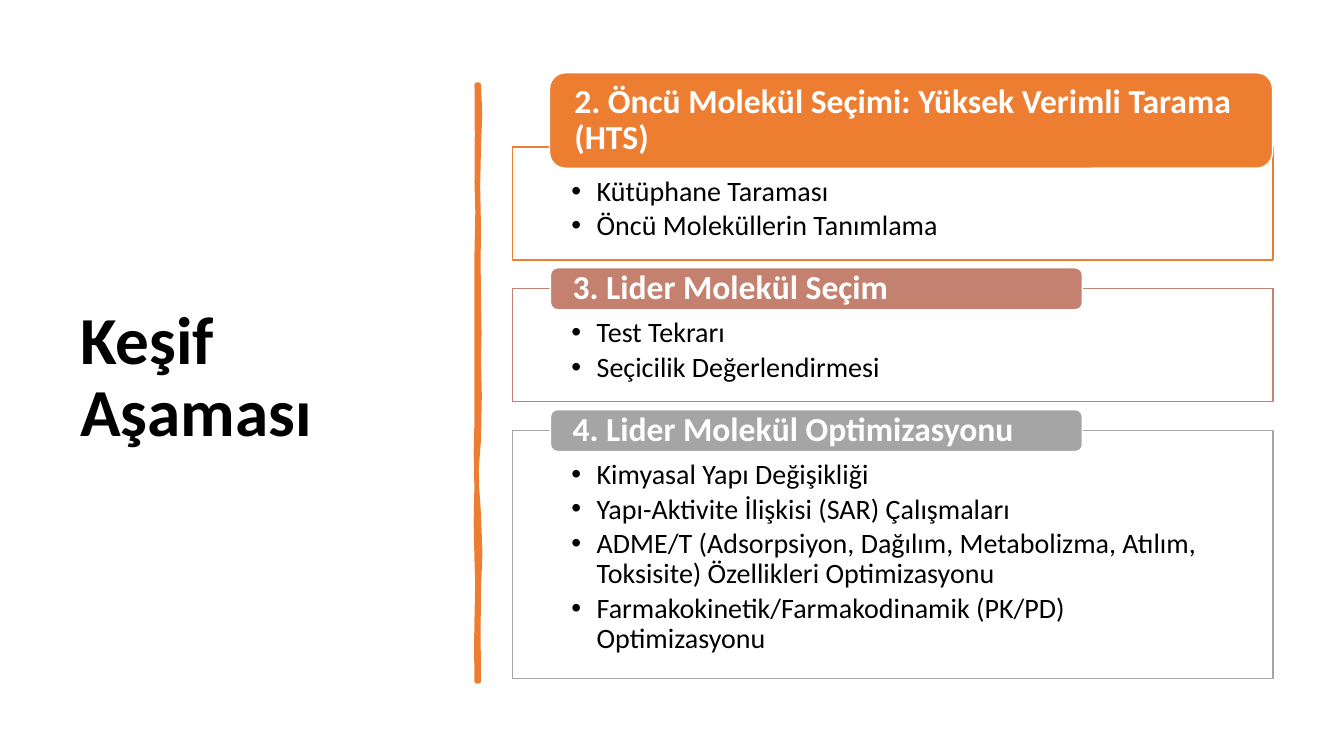
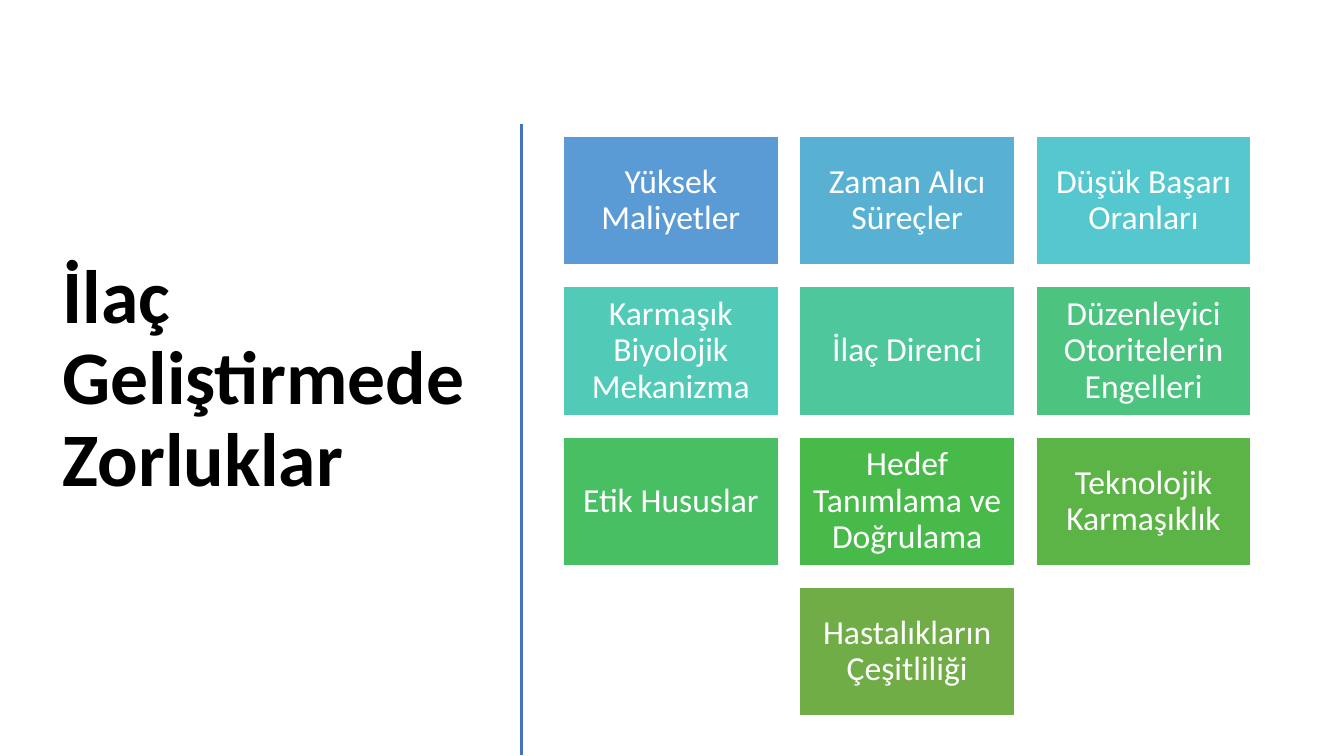
from dataclasses import dataclass

from lxml.etree import SubElement
from pptx import Presentation
from pptx.dml.color import RGBColor
from pptx.enum.shapes import MSO_CONNECTOR, MSO_SHAPE
from pptx.enum.text import MSO_ANCHOR, MSO_AUTO_SIZE, PP_ALIGN
from pptx.oxml.ns import qn
from pptx.util import Pt

FONT = "Calibri"
LINE_SPACING = 0.9
COLORS = {
    "text": "000000",
    "white": "FFFFFF",
    "orange": "ED7D31",
    "rose": "C48170",
    "gray": "A5A5A5",
    "rule": "4472C4",
}


@dataclass(frozen=True)
class Box:
    left: float
    top: float
    width: float
    height: float

    def lengths(self) -> tuple:
        return Pt(self.left), Pt(self.top), Pt(self.width), Pt(self.height)


@dataclass(frozen=True)
class Stage:
    heading: str
    color: str
    tab: Box
    panel_top: float
    panel_height: float
    bullets: tuple[str, ...]


@dataclass(frozen=True)
class Challenge:
    text: str
    color: str


STAGES = (
    Stage("2. Öncü Molekül Seçimi: Yüksek Verimli Tarama (HTS)", "orange",
          Box(392.5, 52, 516.5, 68.2), 105, 80.8,
          ("Kütüphane Taraması", "Öncü Moleküllerin Tanımlama")),
    Stage("3. Lider Molekül Seçim", "rose",
          Box(393.2, 191.3, 380, 30), 206.1, 80.8,
          ("Test Tekrarı", "Seçicilik Değerlendirmesi")),
    Stage("4. Lider Molekül Optimizasyonu", "gray",
          Box(393.2, 292.6, 380, 30), 307.3, 177.2,
          ("Kimyasal Yapı Değişikliği",
           "Yapı-Aktivite İlişkisi (SAR) Çalışmaları",
           "ADME/T (Adsorpsiyon, Dağılım, Metabolizma, Atılım, Toksisite) "
           "Özellikleri Optimizasyonu",
           "Farmakokinetik/Farmakodinamik (PK/PD) Optimizasyonu")),
)

CHALLENGES = (
    Challenge("Yüksek Maliyetler", "5B9BD5"),
    Challenge("Zaman Alıcı Süreçler", "58B1D2"),
    Challenge("Düşük Başarı Oranları", "55C7CE"),
    Challenge("Karmaşık Biyolojik Mekanizma", "52CAB8"),
    Challenge("İlaç Direnci", "4FC79C"),
    Challenge("Düzenleyici Otoritelerin Engelleri", "4CC37F"),
    Challenge("Etik Hususlar", "49BF64"),
    Challenge("Hedef Tanımlama ve Doğrulama", "47BA49"),
    Challenge("Teknolojik Karmaşıklık", "5CB447"),
    Challenge("Hastalıkların Çeşitliliği", "70AD47"),
)

BRUSH_OUTLINE = (
    (342, 60.5), (342.9, 81), (342, 105.1), (341.4, 133), (342, 162.7),
    (341.7, 187), (342, 211.7), (342.4, 238), (342, 256.3), (342.6, 283),
    (342, 313.9), (340.1, 339), (342, 367.2), (343, 395.5), (342, 420.5),
    (341.7, 452), (342, 486.7), (340.6, 486.7), (340.3, 461.5),
    (340.6, 441.4), (341.1, 417), (340.6, 401), (340, 373.5),
    (340.6, 343.4), (340, 324), (340.6, 298.8), (340.6, 272),
    (340.6, 241.2), (340.6, 209), (340.6, 180), (341.2, 151.5),
    (340.6, 130.3), (340.8, 96), (340.6, 60.5),
)


def rgb(color: str) -> RGBColor:
    return RGBColor.from_string(COLORS.get(color, color))


def paint(sp, fill: str, line: str, width: float = 1) -> None:
    sp.shadow.inherit = False
    sp.fill.solid()
    sp.fill.fore_color.rgb = rgb(fill)
    sp.line.color.rgb = rgb(line)
    sp.line.width = Pt(width)


def add_run(p, text: str, size: float, color: str, bold: bool = False) -> None:
    r = p.add_run()
    r.text = text
    r.font.name = FONT
    r.font.size = Pt(size)
    r.font.bold = bold
    r.font.color.rgb = rgb(color)


def set_frame(sp, anchor, insets: tuple[float, float, float, float]):
    tf = sp.text_frame
    tf.word_wrap = True
    tf.auto_size = MSO_AUTO_SIZE.NONE
    tf.vertical_anchor = anchor
    tf.margin_left, tf.margin_top, tf.margin_right, tf.margin_bottom = map(Pt, insets)
    return tf


def set_paragraph(p, align=PP_ALIGN.LEFT, after: float = 0) -> None:
    p.alignment = align
    p.line_spacing = LINE_SPACING
    p.space_after = Pt(after)


def add_bullet(p, indent: float = 18) -> None:
    pPr = p._p.get_or_add_pPr()
    pPr.set("marL", str(Pt(indent)))
    pPr.set("indent", str(-Pt(indent)))
    SubElement(pPr, qn("a:buFont"), typeface="Arial")
    SubElement(pPr, qn("a:buChar"), char="•")


def add_titled_slide(prs, title: str, box: Box, size: float):
    s = prs.slides.add_slide(prs.slide_layouts[5])
    sp = s.shapes.title
    sp.left, sp.top, sp.width, sp.height = box.lengths()
    p = set_frame(sp, MSO_ANCHOR.MIDDLE, (7.2, 3.6, 7.2, 3.6)).paragraphs[0]
    set_paragraph(p)
    add_run(p, title, size, "text", bold=True)
    return s


def add_box(s, kind, box: Box, fill: str, line: str):
    sp = s.shapes.add_shape(kind, *box.lengths())
    paint(sp, fill, line)
    return sp


def add_brush_rule(s) -> None:
    start, *points = [(Pt(x), Pt(y)) for x, y in BRUSH_OUTLINE]
    fb = s.shapes.build_freeform(*start)
    fb.add_line_segments(points, close=True)
    paint(fb.convert_to_shape(), "orange", "orange", 3.25)


def add_stage(s, stage: Stage) -> None:
    box = Box(366, stage.panel_top, 543.4, stage.panel_height)
    panel = add_box(s, MSO_SHAPE.RECTANGLE, box, "white", stage.color)
    tf = set_frame(panel, MSO_ANCHOR.TOP, (42.2, 21.6, 42.2, 11.5))
    for i, text in enumerate(stage.bullets):
        p = tf.add_paragraph() if i else tf.paragraphs[0]
        set_paragraph(p, after=3)
        add_bullet(p)
        add_run(p, text, 20, "text")
    tab = add_box(s, MSO_SHAPE.ROUNDED_RECTANGLE, stage.tab, stage.color, "white")
    p = set_frame(tab, MSO_ANCHOR.MIDDLE, (14.4, 0, 14.4, 0)).paragraphs[0]
    set_paragraph(p)
    add_run(p, stage.heading, 24, "white", bold=True)


def add_rule(s, x: float, top: float, bottom: float) -> None:
    rule = s.shapes.add_connector(MSO_CONNECTOR.STRAIGHT, Pt(x), Pt(top), Pt(x), Pt(bottom))
    rule.line.color.rgb = rgb("rule")
    rule.line.width = Pt(2)
    SubElement(rule._element.spPr, qn("a:effectLst"))


def add_challenges(s, left: float, top: float, width: float, columns: int = 3) -> None:
    height, gap = 0.6 * width, 0.1 * width
    for i, challenge in enumerate(CHALLENGES):
        row, column = divmod(i, columns)
        in_row = min(columns, len(CHALLENGES) - row * columns)
        shift = column + (columns - in_row) / 2
        box = Box(left + shift * (width + gap), top + row * (height + gap), width, height)
        sp = add_box(s, MSO_SHAPE.RECTANGLE, box, challenge.color, "white")
        p = set_frame(sp, MSO_ANCHOR.MIDDLE, (7.2,) * 4).paragraphs[0]
        set_paragraph(p, PP_ALIGN.CENTER)
        add_run(p, challenge.text, 24, "white")


def main() -> None:
    prs = Presentation()
    prs.slide_width, prs.slide_height = Pt(960), Pt(540)

    s = add_titled_slide(prs, "Keşif Aşaması", Box(50, 50.4, 269.3, 440), 48)
    add_brush_rule(s)
    for stage in STAGES:
        add_stage(s, stage)

    s = add_titled_slide(prs, "İlaç Geliştirmede Zorluklar", Box(37.4, 51.7, 310.3, 440), 54)
    add_rule(s, 372.5, 88.3, 539.5)
    add_challenges(s, 402.4, 97.1, 153.5)

    prs.save("out.pptx")


if __name__ == "__main__":
    main()
